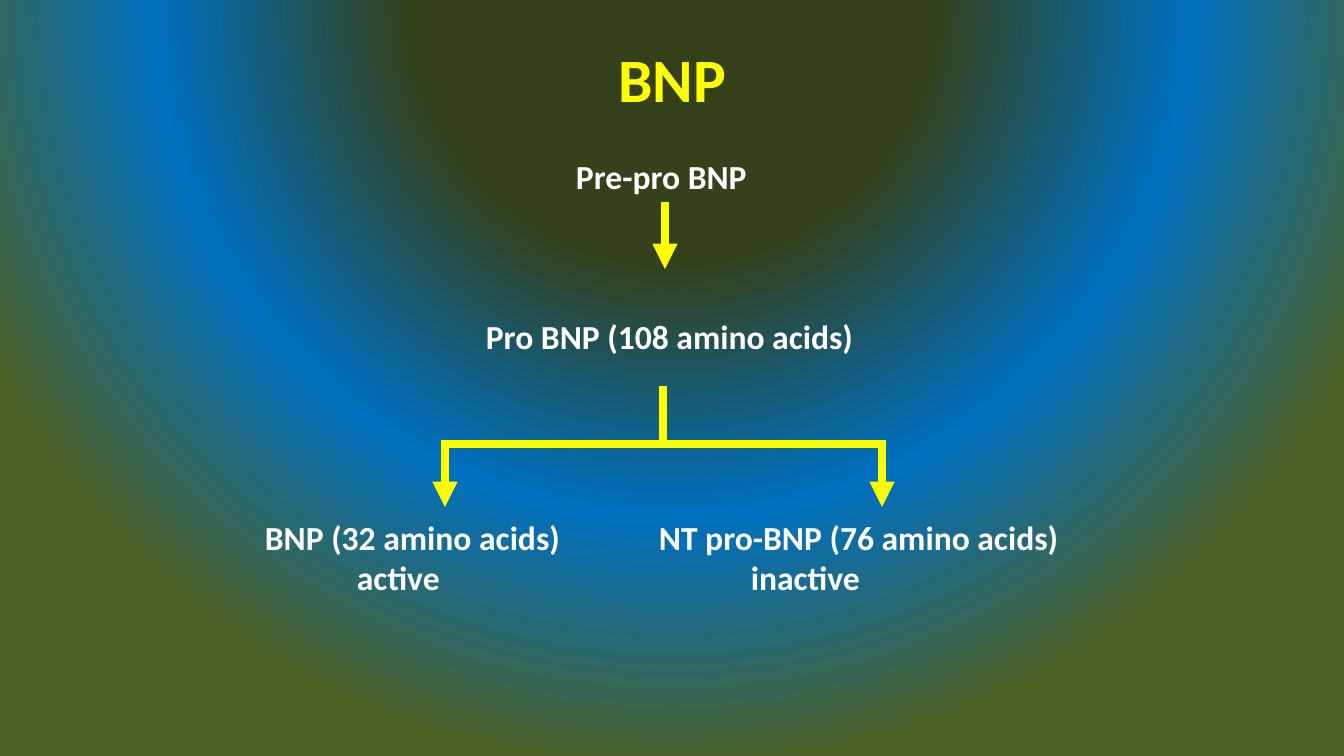
from pptx import Presentation
from pptx.dml.color import RGBColor
from pptx.enum import shapes, text
from pptx.oxml import parse_xml
from pptx.oxml.ns import nsdecls, qn
from pptx.util import Pt
from lxml import etree

PX = 914400 / 100.8
HUES = {"title": "FFFF00", "body": "FFFFFF", "line": "FFFF00",
        "core": "34411B", "ring": "0070C0", "edge": "4F6228"}


def emu(*sizes):
    return [round(size * PX) for size in sizes]


def color(name):
    return RGBColor.from_string(HUES[name])


def paint(slide):
    stops = "".join(
        f'<a:gs pos="{pos}000"><a:srgbClr val="{HUES[name]}"/></a:gs>'
        for pos, name in ((34, "core"), (67, "ring"), (100, "edge")))
    back = parse_xml(
        f'<p:bg {nsdecls("p", "a")}><p:bgPr><a:gradFill rotWithShape="1">'
        f'<a:gsLst>{stops}</a:gsLst><a:path path="circle">'
        '<a:fillToRect l="50000" t="-80000" r="50000" b="180000"/></a:path>'
        '</a:gradFill><a:effectLst/></p:bgPr></p:bg>')
    slide.element.cSld.insert(0, back)


def style(para, size, hue):
    font = para.font
    font.name, font.size, font.bold = "Calibri", Pt(size), True
    font.color.rgb = color(hue)


def title(slide, words, box):
    frame = slide.shapes.add_textbox(*emu(*box)).text_frame
    frame.word_wrap = True
    frame.vertical_anchor = text.MSO_ANCHOR.MIDDLE
    para = frame.paragraphs[0]
    para.text = words
    para.alignment = text.PP_ALIGN.CENTER
    style(para, 44, "title")


def label(slide, words, box, note=None, wrap=False):
    frame = slide.shapes.add_textbox(*emu(*box)).text_frame
    frame.word_wrap = wrap
    frame.auto_size = text.MSO_AUTO_SIZE.SHAPE_TO_FIT_TEXT
    frame.text = words
    if note:
        para = frame.add_paragraph()
        para.text = note
        para._p.get_or_add_pPr().set("marL", str(emu(92)[0]))
    for para in frame.paragraphs:
        style(para, 24, "body")


def line(slide, start, end, arrow=False):
    link = slide.shapes.add_connector(
        shapes.MSO_CONNECTOR.STRAIGHT, *emu(*start, *end))
    link.line.color.rgb = color("line")
    link.line.width = Pt(6)
    if arrow:
        etree.SubElement(link.line._get_or_add_ln(), qn("a:tailEnd"),
                         type="triangle")
    etree.SubElement(link._element.spPr, qn("a:effectLst"))


def main():
    deck = Presentation()
    deck.slide_width, deck.slide_height = emu(1344, 756)
    slide = deck.slides.add_slide(deck.slide_layouts[6])
    paint(slide)
    title(slide, "BNP", (219, 30, 907, 96))
    label(slide, "Pre-pro BNP", (566, 151, 193, 50))
    label(slide, "Pro BNP (108 amino acids)", (476, 311, 391, 50))
    label(slide, "BNP (32 amino acids)", (255, 512, 319, 92), "active")
    label(slide, "NT pro-BNP (76 amino acids)", (649, 512, 504, 92),
          "inactive", True)
    line(slide, (665, 202), (665, 269), True)
    for x in (445, 882):
        line(slide, (x, 440), (x, 507), True)
    line(slide, (443, 444), (882, 444))
    line(slide, (663, 444), (663, 386))
    deck.save("out.pptx")


if __name__ == "__main__":
    main()
